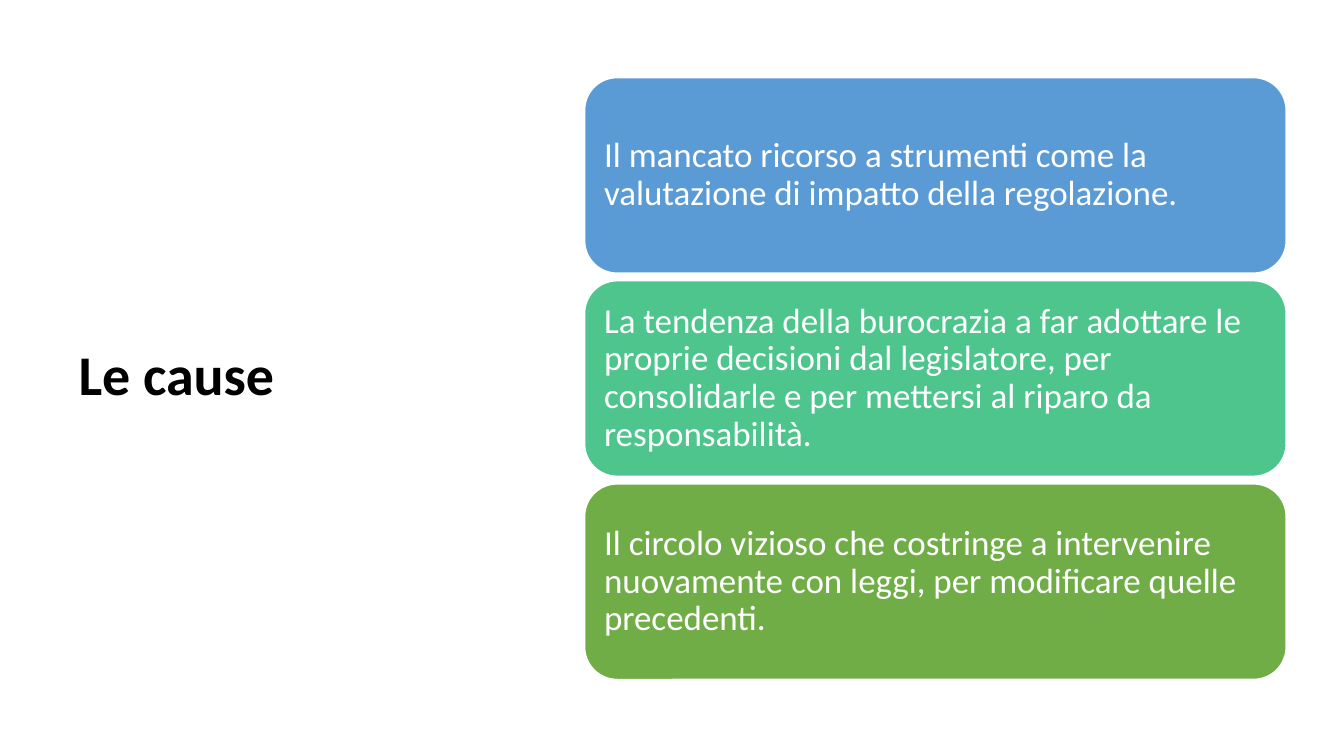
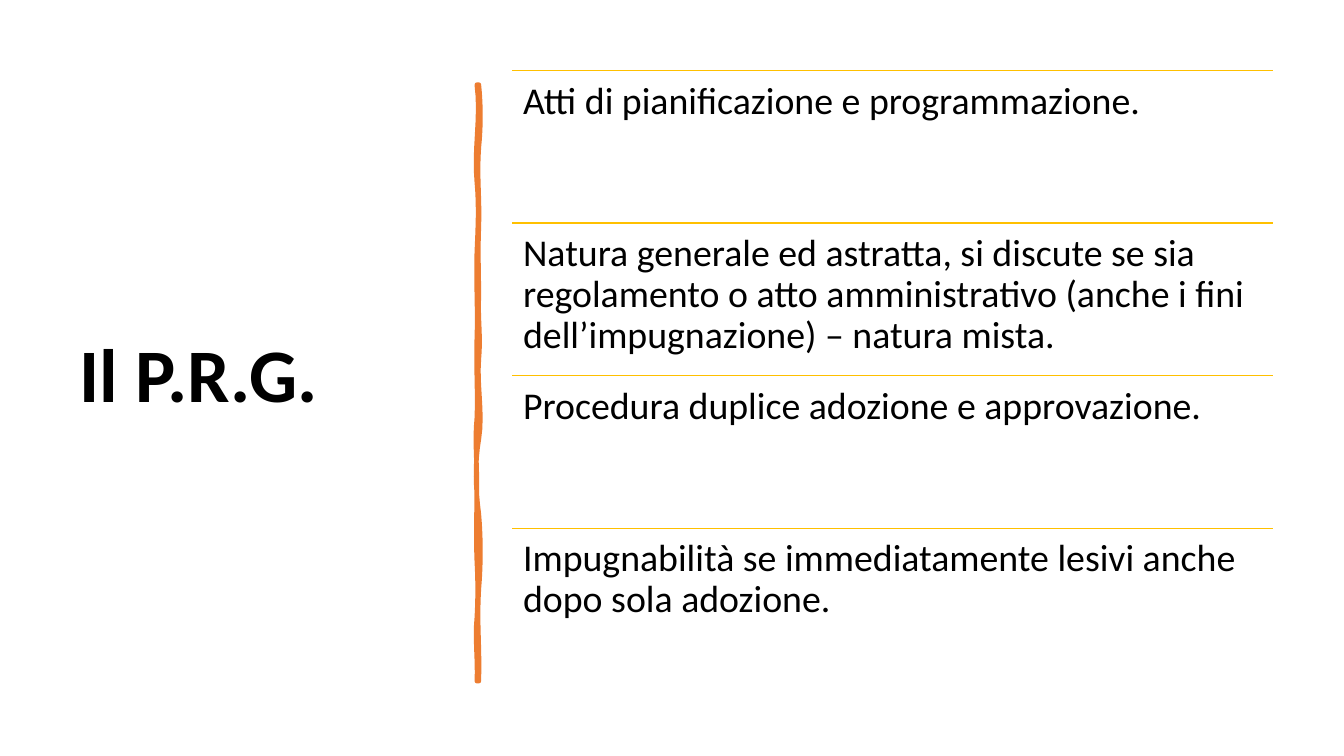
from pptx import Presentation
from pptx.dml.color import RGBColor
from pptx.enum.shapes import MSO_CONNECTOR, MSO_SHAPE
from pptx.enum.text import MSO_ANCHOR, MSO_AUTO_SIZE, PP_ALIGN
from pptx.oxml.ns import qn
from pptx.util import Inches, Pt
from lxml.etree import SubElement

COLORS = {
    "black": "000000", "white": "FFFFFF", "blue": "5B9BD5",
    "teal": "4DC58D", "green": "70AD47", "orange": "ED7D31",
    "gold": "FFC000",
}
FONT = "Calibri"
GRID = 100


def rgb(name):
    return RGBColor.from_string(COLORS[name])


def apply(target, values):
    for key, value in values.items():
        setattr(target, key, value)


class Deck:
    def __init__(self):
        self.show = Presentation()
        apply(self.show, {"slide_width": Inches(13.333), "slide_height": Inches(7.5)})
        self.slide = None

    def x(self, cols):
        return round(self.show.slide_width * cols / GRID)

    def y(self, rows):
        return round(self.show.slide_height * rows / GRID)

    def rect(self, left, top, width, height):
        return self.x(left), self.y(top), self.x(width), self.y(height)

    def label(self, shape, text, size, color="black", anchor=MSO_ANCHOR.MIDDLE,
              inset=0.1, bold=False):
        frame = shape.text_frame
        frame.text = text
        apply(frame, {"word_wrap": True, "auto_size": MSO_AUTO_SIZE.NONE,
                      "vertical_anchor": anchor})
        sides = ("left", "top", "right", "bottom")
        apply(frame, {f"margin_{side}": Inches(inset) for side in sides})
        para = frame.paragraphs[0]
        apply(para, {"alignment": PP_ALIGN.LEFT, "line_spacing": 0.9})
        font = para.runs[0].font
        apply(font, {"name": FONT, "size": Pt(size), "bold": bold})
        font.color.rgb = rgb(color)

    def stroke(self, line, color, width):
        line.color.rgb = rgb(color)
        line.width = Pt(width)

    def paint(self, shape, fill, line, width):
        shape.shadow.inherit = False
        shape.fill.solid()
        shape.fill.fore_color.rgb = rgb(fill)
        self.stroke(shape.line, line, width)

    def page(self, title, size, area):
        self.slide = self.show.slides.add_slide(self.show.slide_layouts[5])
        head = self.slide.shapes.title
        apply(head, dict(zip(("left", "top", "width", "height"), self.rect(*area))))
        self.label(head, title, size, bold=True)

    def card(self, text, fill, area):
        shape = self.slide.shapes.add_shape(MSO_SHAPE.ROUNDED_RECTANGLE, *self.rect(*area))
        self.paint(shape, fill, "white", 1)
        self.label(shape, text, 25, "white")

    def rule(self, left, top, width):
        line = self.slide.shapes.add_connector(
            MSO_CONNECTOR.STRAIGHT, self.x(left), self.y(top),
            self.x(left + width), self.y(top))
        self.stroke(line.line, "gold", 1)
        SubElement(line._element.spPr, qn("a:effectLst"))

    def entry(self, text, area):
        self.rule(*area[:3])
        box = self.slide.shapes.add_textbox(*self.rect(*area))
        self.label(box, text, 27, anchor=MSO_ANCHOR.TOP, inset=0.11)

    def brush(self, points, color):
        spots = [(self.x(col), self.y(row)) for col, row in points]
        pen = self.slide.shapes.build_freeform(*spots[0], scale=1.0)
        pen.add_line_segments(spots[1:], close=True)
        self.paint(pen.convert_to_shape(), color, color, 3.25)


def wave(col, row, bends, steps=8):
    points = [(col, row)]
    for end, first, last in bends:
        for step in range(1, steps + 1):
            t = step / steps
            bow = 3 * t * (1 - t) * (first * (1 - t) + last * t)
            points.append((col + bow * 0.08, row + (end - row) * t))
        row = end
    return points


CAUSES = [
    ("Il mancato ricorso a strumenti come la valutazione di impatto della regolazione.", "blue"),
    ("La tendenza della burocrazia a far adottare le proprie decisioni dal legislatore, "
     "per consolidarle e per mettersi al riparo da responsabilità.", "teal"),
    ("Il circolo vizioso che costringe a intervenire nuovamente con leggi, "
     "per modificare quelle precedenti.", "green"),
]
TOPICS = [
    "Atti di pianificazione e programmazione.",
    "Natura generale ed astratta, si discute se sia regolamento o atto amministrativo "
    "(anche i fini dell’impugnazione) – natura mista.",
    "Procedura duplice adozione e approvazione.",
    "Impugnabilità se immediatamente lesivi anche dopo sola adozione.",
]
DOWN = [(19.5, 2, 2), (30.1, -2, 1), (39.2, -1, 0), (47.5, -1, 2),
        (58.1, -2, 4), (68, -4, -3), (77.9, 2, 2), (90.1, -2, 1)]
UP = [(81.7, 1, -2), (74.3, 1, 1), (63.6, -1, 0), (55.3, 0, -2),
      (44.7, 1, -1), (33.3, 1, -1), (24.1, 1, 2), (11.2, -3, 4)]


def main():
    deck = Deck()

    deck.page("Le cause", 40, (5.1, 16.93, 29.55, 66))
    high, gap = 25.87, 1
    for i, (text, fill) in enumerate(CAUSES):
        deck.card(text, fill, (43.5, 10.27 + i * (high + gap), 52.2, high))

    deck.page("Il P.R.G.", 54, (5.18, 9.33, 28.05, 81.47))
    deck.brush(wave(35.63, 11.2, DOWN) + wave(35.48, 90.1, UP), "orange")
    high = 20.18
    for i, text in enumerate(TOPICS):
        deck.entry(text, (38.1, 9.33 + i * high, 56.63, high))

    deck.show.save("out.pptx")


if __name__ == "__main__":
    main()
